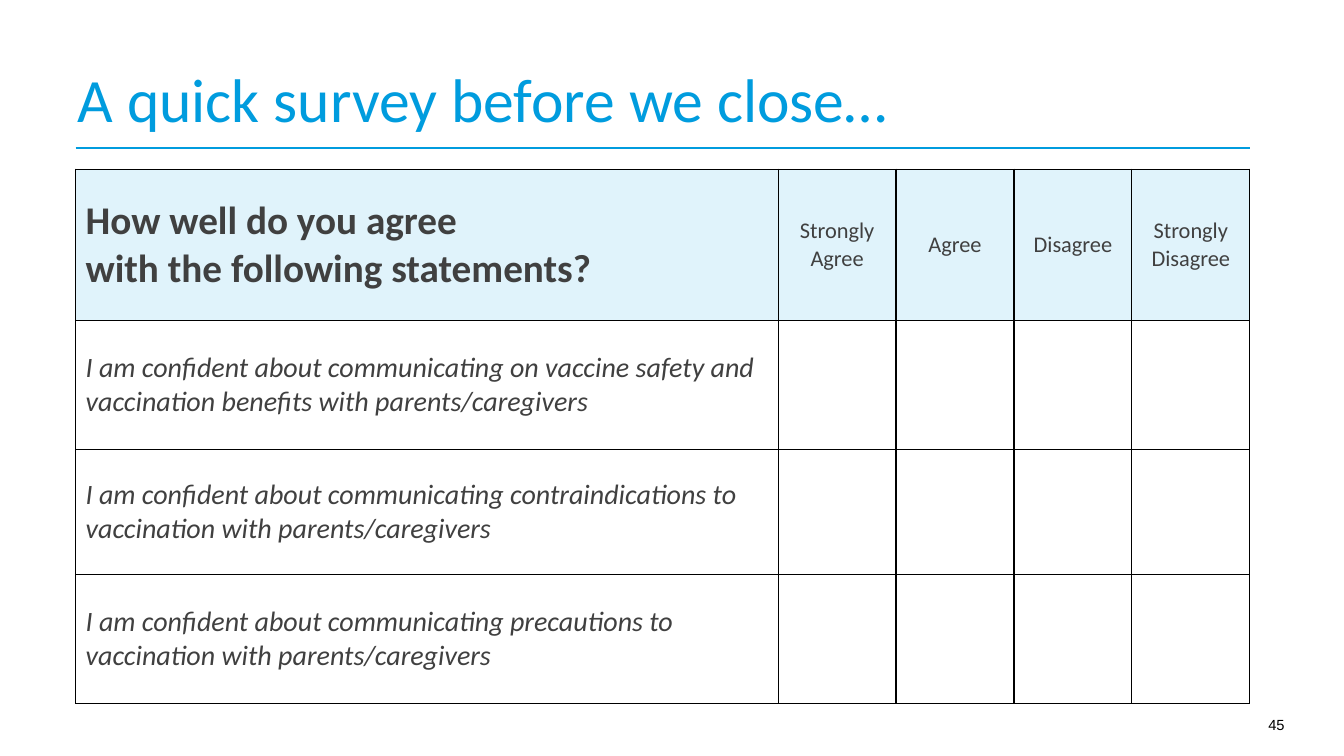
from dataclasses import dataclass

from lxml.etree import SubElement
from pptx import Presentation
from pptx.dml.color import RGBColor
from pptx.enum.shapes import MSO_CONNECTOR as Conn
from pptx.enum.text import MSO_ANCHOR as Anchor, PP_ALIGN as Align
from pptx.oxml.ns import qn
from pptx.slide import Slide
from pptx.table import _Cell as Cell
from pptx.text.text import TextFrame
from pptx.util import Inches, Pt

# Grid: 160 columns by 150 rows over the slide
SLIDE_W, SLIDE_H = 13.333, 7.5
COLUMNS, ROWS = 160, 150
LEFT, CONTENT_W = 9, 139.8

BLUE, PALE, DARK, BLACK = "009CDE", "E0F3FB", "404040", "000000"


@dataclass
class Style:
    size: float
    color: str = DARK
    font: str = "Calibri"
    align: Align = Align.LEFT
    bold: bool = False
    italic: bool = False
    spacing: float = 1.0


@dataclass
class Label:
    text: str
    box: tuple[float, float, float, float]
    style: Style
    anchor: Anchor = Anchor.TOP
    insets: tuple[float, float, float, float] = (0.1, 0.05, 0.1, 0.05)


TITLE = Style(44, BLUE, spacing=0.9)
PAGE = Style(10.5, BLACK, "Arial", Align.RIGHT)
QUESTION = Style(28, bold=True)
ANSWER = Style(16, align=Align.CENTER)
STATEMENT = Style(20, italic=True)

LABELS = [
    Label("45", (143.4, 141, 10.7, 5.8), PAGE),
    Label("A quick survey before we close…", (LEFT, 15, 134.8, 12), TITLE,
          Anchor.BOTTOM, (0.02, 0, 0.39, 0)),
]
HEADING = "How well do you agree\nwith the following statements?"
ANSWERS = ["Strongly Agree", "Agree", "Disagree", "Strongly Disagree"]
STATEMENTS = [
    "I am confident about communicating on vaccine safety and "
    "vaccination benefits with parents/caregivers",
    "I am confident about communicating contraindications to "
    "vaccination with parents/caregivers",
    "I am confident about communicating precautions to "
    "vaccination with parents/caregivers",
]
ANSWER_W = 14.04
ROW_HEIGHTS = [30, 25.6, 24.8, 25.6]


def x(columns: float) -> int:
    return Inches(columns * SLIDE_W / COLUMNS)


def y(rows: float) -> int:
    return Inches(rows * SLIDE_H / ROWS)


def rgb(color: str) -> RGBColor:
    return RGBColor.from_string(color)


def write(tf: TextFrame, text: str, style: Style) -> None:
    tf.text = text
    for p in tf.paragraphs:
        p.alignment = style.align
        p.line_spacing = style.spacing
        for r in p.runs:
            r.font.name = style.font
            r.font.size = Pt(style.size)
            r.font.bold = style.bold
            r.font.italic = style.italic
            r.font.color.rgb = rgb(style.color)


def add_label(s: Slide, label: Label) -> None:
    left, top, width, height = label.box
    tf = s.shapes.add_textbox(x(left), y(top), x(width), y(height)).text_frame
    tf.word_wrap = True
    tf.vertical_anchor = label.anchor
    (tf.margin_left, tf.margin_top,
     tf.margin_right, tf.margin_bottom) = map(Inches, label.insets)
    write(tf, label.text, label.style)


def add_rule(s: Slide, row: float) -> None:
    rule = s.shapes.add_connector(
        Conn.STRAIGHT, x(LEFT), y(row), x(LEFT + CONTENT_W), y(row))
    rule.line.color.rgb = rgb(BLUE)
    rule.line.width = Pt(1.5)
    SubElement(rule._element.spPr, qn("a:effectLst"))


def format_cell(cell: Cell, fill: str | None) -> None:
    tc_pr = cell._tc.get_or_add_tcPr()
    for side in ("lnL", "lnR", "lnT", "lnB"):
        line = SubElement(tc_pr, qn(f"a:{side}"), w=str(Pt(1)))
        solid = SubElement(line, qn("a:solidFill"))
        SubElement(solid, qn("a:srgbClr"), val=BLACK)
    if fill:
        cell.fill.solid()
        cell.fill.fore_color.rgb = rgb(fill)
    else:
        cell.fill.background()
    cell.vertical_anchor = Anchor.MIDDLE


def add_survey(s: Slide, top: float) -> None:
    widths = [CONTENT_W - len(ANSWERS) * ANSWER_W] + [ANSWER_W] * len(ANSWERS)
    table = s.shapes.add_table(
        len(ROW_HEIGHTS), len(widths), x(LEFT), y(top),
        x(CONTENT_W), y(sum(ROW_HEIGHTS))).table
    table.horz_banding = False
    for column, width in zip(table.columns, widths):
        column.width = x(width)
    for i, (row, height) in enumerate(zip(table.rows, ROW_HEIGHTS)):
        row.height = y(height)
        for cell in row.cells:
            format_cell(cell, None if i else PALE)

    # Header row, then one statement per row
    write(table.cell(0, 0).text_frame, HEADING, QUESTION)
    for i, answer in enumerate(ANSWERS, 1):
        write(table.cell(0, i).text_frame, answer, ANSWER)
    for i, statement in enumerate(STATEMENTS, 1):
        write(table.cell(i, 0).text_frame, statement, STATEMENT)


def main() -> None:
    prs = Presentation()
    prs.slide_width, prs.slide_height = Inches(SLIDE_W), Inches(SLIDE_H)
    s = prs.slides.add_slide(prs.slide_layouts[6])
    # Title, page number and rule
    for label in LABELS:
        add_label(s, label)
    add_rule(s, 29.4)
    # Survey table
    add_survey(s, 33.6)
    prs.save("out.pptx")


if __name__ == "__main__":
    main()
